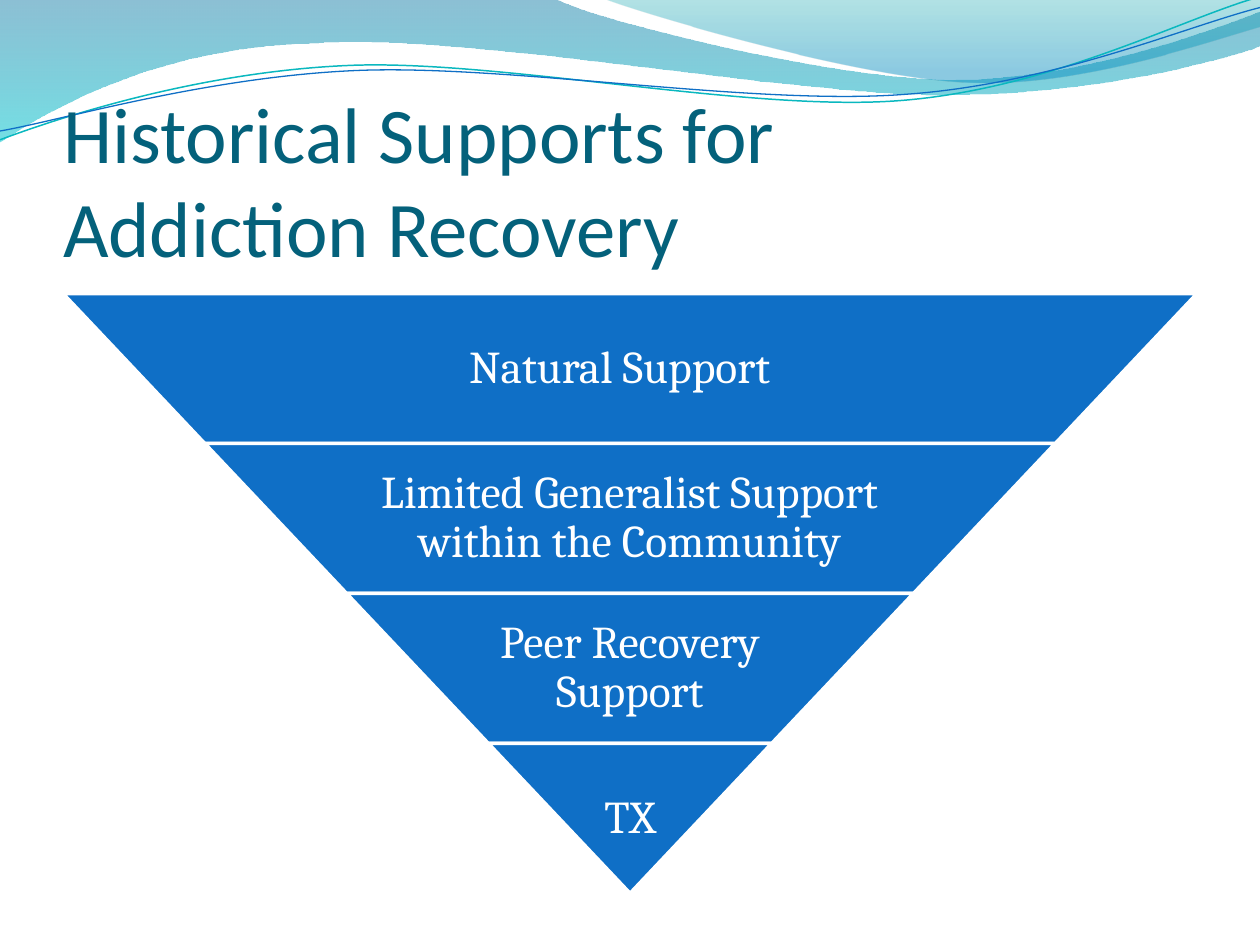
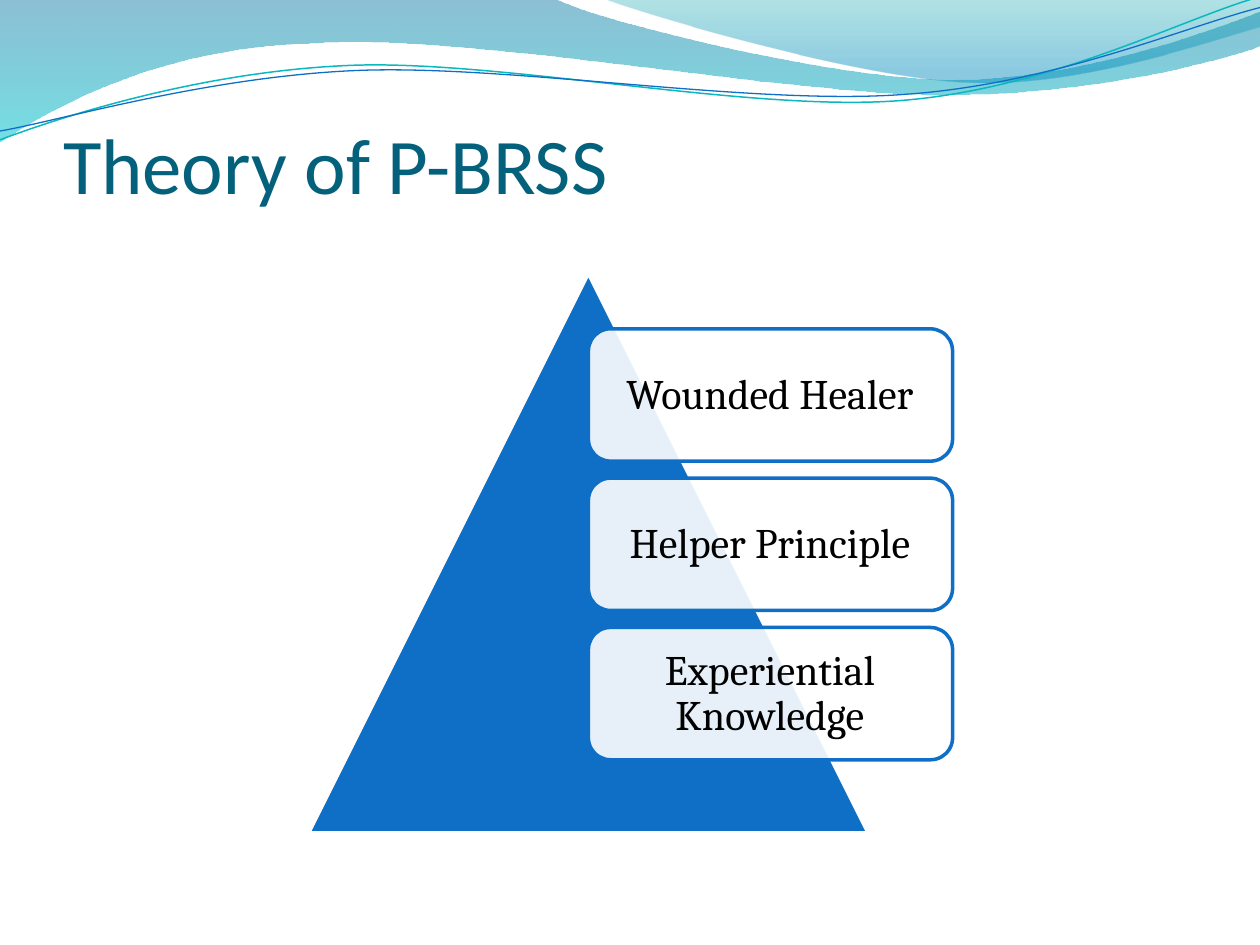
from pptx import Presentation
from pptx.dml.color import RGBColor
from pptx.enum import shapes, text
from pptx.oxml.ns import qn
from pptx.util import Inches, Pt
from lxml import etree

BLUE = RGBColor(0x0F, 0x6F, 0xC6)
TEAL = RGBColor(0x0A, 0xB8, 0xBF)
NAVY = RGBColor(0x04, 0x61, 0x7B)
WHITE = RGBColor(0xFF, 0xFF, 0xFF)
BLACK = RGBColor(0, 0, 0)
HEAD, BODY = "Calibri", "Cambria"

# Outlines in inches: a pair is a corner, a triple of pairs is a curve
BACK = [(0, 0), (4.4, -0.01),
        ((4.76, 0.17), (6.64, 0.63), (7.58, 0.63)),
        ((8.53, 0.63), (9.58, 0.26), (10, 0.09)), (10.01, 0.36),
        ((9.83, 0.44), (8.7, 0.76), (7.46, 0.75)),
        ((6.22, 0.75), (3.82, 0.28), (2.57, 0.34)),
        ((1.29, 0.36), (0.46, 0.83), (-0.01, 1.13))]
FRONT = [(4.79, -0.01),
         ((5.09, 0.11), (6.82, 0.62), (7.69, 0.65)),
         ((8.56, 0.69), (9.61, 0.32), (10, 0.21)), (10, 0)]
UPPER = [(0, 1.11),
         ((0.48, 0.93), (1.58, 0.57), (2.77, 0.52)),
         ((3.95, 0.47), (5.93, 0.89), (7.13, 0.8)),
         ((8.33, 0.71), (9.38, 0.15), (9.98, -0.02))]
LOWER = [(0, 1.04),
         ((0.47, 0.96), (1.64, 0.61), (2.83, 0.56)),
         ((4.03, 0.51), (5.97, 0.84), (7.17, 0.75)),
         ((8.36, 0.67), (9.41, 0.21), (10, 0.06))]

# Each stop: position, colour, opacity in percent
DEEP = [(0, RGBColor(0x00, 0x74, 0xA1), 45),
        (1, RGBColor(0x00, 0xC6, 0xCF), 55)]
PALE = [(0, RGBColor(0x00, 0xA1, 0xA9), 30),
        (0.8, RGBColor(0x00, 0x8B, 0xBF), 45)]


def trace(slide, parts, close):
    """Draw an outline, then turn each triple of points into a curve."""
    points = []
    for part in parts:
        points += part if len(part) == 3 else [part]
    points = [(Inches(x), Inches(y)) for x, y in points]
    pen = slide.shapes.build_freeform(*points[0])
    pen.add_line_segments(points[1:], close=close)
    shape = pen.convert_to_shape()
    shape.shadow.inherit = False
    lines = iter(list(shape._element.spPr.iter(qn("a:lnTo"))))
    for part in parts[1:]:
        first = next(lines)
        if len(part) == 3:
            first.tag = qn("a:cubicBezTo")
            for line in (next(lines), next(lines)):
                first.append(line[0])
                line.getparent().remove(line)
    return shape


def fade(color, percent):
    """Set the opacity of a colour element."""
    etree.SubElement(color, qn("a:alpha"), val=str(percent * 1000))


def add_wave(slide, parts, stops):
    wave = trace(slide, parts, True)
    wave.line.fill.background()
    wave.fill.gradient()
    wave.fill.gradient_angle = 270
    for stop, (place, color, _) in zip(wave.fill.gradient_stops, stops):
        stop.position = place
        stop.color.rgb = color
    for color, stop in zip(wave._element.spPr.iter(qn("a:srgbClr")), stops):
        fade(color, stop[2])


def add_curl(slide, parts, color, width):
    curl = trace(slide, parts, False)
    curl.fill.background()
    curl.line.color.rgb = color
    curl.line.width = Pt(width)


def add_form(slide, kind, box, fill, line):
    form = slide.shapes.add_shape(kind, *map(Inches, box))
    form.shadow.inherit = False
    form.fill.solid()
    form.fill.fore_color.rgb = fill
    form.line.color.rgb = line
    form.line.width = Pt(2)
    return form


def write(shape, words, font, size, color, margins, align, anchor):
    frame = shape.text_frame
    frame.word_wrap = True
    frame.auto_size = text.MSO_AUTO_SIZE.NONE
    frame.vertical_anchor = anchor
    (frame.margin_left, frame.margin_top,
     frame.margin_right, frame.margin_bottom) = map(Inches, margins)
    frame.text = words
    para = frame.paragraphs[0]
    para.alignment = align
    para.font.name = font
    para.font.size = Pt(size)
    para.font.color.rgb = color
    return para


def label(shape, words, size, color, margins):
    para = write(shape, words, BODY, size, color, margins,
                 text.PP_ALIGN.CENTER, text.MSO_ANCHOR.MIDDLE)
    para.line_spacing = 0.9


def add_slide(deck, title, top, height, foot):
    """A slide with the shared waves and title style."""
    slide = deck.slides.add_slide(deck.slide_layouts[5])
    add_wave(slide, BACK, DEEP)
    add_wave(slide, FRONT, PALE)
    add_curl(slide, UPPER, TEAL, 0.85)
    add_curl(slide, LOWER, BLUE, 0.75)
    head = slide.shapes.title
    head.left, head.top, head.width, head.height = map(
        Inches, (0.5, top, 9, height))
    write(head, title, HEAD, 45, NAVY, (0, 0.05, 0, foot),
          text.PP_ALIGN.LEFT, text.MSO_ANCHOR.BOTTOM)
    slide.shapes._spTree.append(head._element)  # title above the waves
    return slide


def add_funnel(slide, names):
    """Inverted pyramid, one band per name."""
    left, top, width, high = 0.5, 2.33, 9, 1.19
    step = width / len(names)
    for i, name in enumerate(names):
        wide = width - i * step
        x, y = left + i * step / 2, top + i * high
        band = add_form(slide, shapes.MSO_SHAPE.TRAPEZOID,
                        (x, y, wide, high), BLUE, WHITE)
        band.rotation = 180
        band.adjustments[0] = step / 2 / high
        last = i == len(names) - 1
        room = wide if last else 0.65 * wide
        box = slide.shapes.add_textbox(*map(
            Inches, (x + (wide - room) / 2, y, room, high)))
        right = 0.2 if i == 0 else 0.04  # top name sits a little left
        label(box, name, 26, WHITE, (0.04, 0.04, right, 0.04))


def add_cards(slide, names):
    """Translucent cards stacked down the side of the triangle."""
    first, last = 2.61, 4.98
    step = (last - first) / (len(names) - 1)
    for i, name in enumerate(names):
        card = add_form(slide, shapes.MSO_SHAPE.ROUNDED_RECTANGLE,
                        (4.67, first + i * step, 2.89, 1.05), WHITE, BLUE)
        fade(next(card._element.spPr.iter(qn("a:srgbClr"))), 90)
        label(card, name, 24, BLACK, (0.14, 0.16, 0.15, 0.15))


def main():
    deck = Presentation()
    deck.slide_width, deck.slide_height = Inches(10), Inches(7.5)

    # Layers of support
    slide = add_slide(deck, "Historical Supports for \vAddiction Recovery",
                      0.92, 1.25, 0)
    add_funnel(slide, ["Natural Support",
                       "Limited Generalist Support within the Community",
                       "Peer Recovery Support", "TX"])

    # Theory
    slide = add_slide(deck, "Theory of P-BRSS", 0.77, 1.65, 0.75)
    add_form(slide, shapes.MSO_SHAPE.ISOSCELES_TRIANGLE,
             (2.45, 2.17, 4.44, 4.44), BLUE, WHITE)
    add_cards(slide, ["Wounded Healer", "Helper Principle",
                      "Experiential Knowledge"])

    deck.save("out.pptx")


if __name__ == "__main__":
    main()
